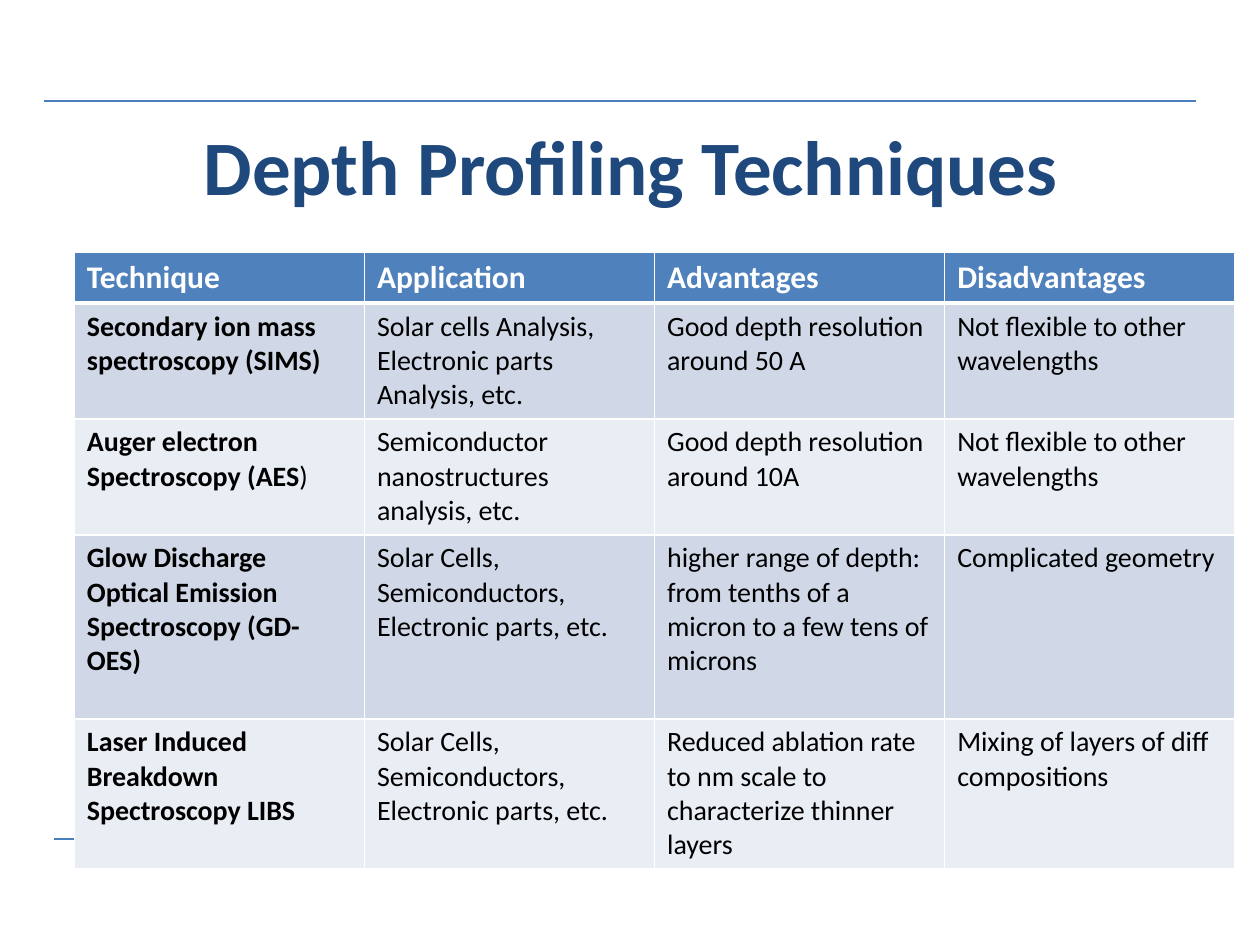
from dataclasses import dataclass

from lxml import etree
from pptx import Presentation
from pptx.dml.color import RGBColor
from pptx.enum.shapes import MSO_CONNECTOR
from pptx.enum.text import MSO_ANCHOR, PP_ALIGN
from pptx.oxml.ns import qn
from pptx.util import Inches, Pt

STRAIGHT = MSO_CONNECTOR.STRAIGHT
MIDDLE = MSO_ANCHOR.MIDDLE
CENTER = PP_ALIGN.CENTER
TITLE_ONLY = 5


@dataclass(frozen=True)
class Theme:
    font: str = "Calibri"
    title: str = "1F497D"
    rule: str = "4B7EBC"
    header: str = "4F81BD"
    bands: tuple = ("D0D8E8", "E9EDF4")
    white: str = "FFFFFF"
    text: str = "000000"
    title_size: int = 44
    header_size: int = 18
    body_size: int = 16


theme = Theme()


def add_text(paragraph, text, size=theme.body_size, color=theme.text, bold=False):
    run = paragraph.add_run()
    run.text = text
    run.font.name = theme.font
    run.font.size = Pt(size)
    run.font.bold = bold
    run.font.color.rgb = RGBColor.from_string(color)


def set_borders(cell, bottom_width):
    properties = cell._tc.get_or_add_tcPr()
    for tag, width in (("a:lnL", 1), ("a:lnR", 1), ("a:lnT", 1), ("a:lnB", bottom_width)):
        line = etree.SubElement(properties, qn(tag), w=str(Pt(width)))
        fill = etree.SubElement(line, qn("a:solidFill"))
        etree.SubElement(fill, qn("a:srgbClr"), val=theme.white)


presentation = Presentation()
presentation.slide_width = Inches(10)
presentation.slide_height = Inches(7.5)
slide = presentation.slides.add_slide(presentation.slide_layouts[TITLE_ONLY])

# Rules above the title and at the foot
for left, right, y in ((0.35, 9.49, 0.8), (0.43, 9.57, 6.66)):
    rule = slide.shapes.add_connector(
        STRAIGHT, Inches(left), Inches(y), Inches(right), Inches(y)
    )
    rule.line.color.rgb = RGBColor.from_string(theme.rule)
    rule.line.width = Pt(1)
    etree.SubElement(rule._element.spPr, qn("a:effectLst"))

# Title
title = slide.shapes.title
title.left, title.top = Inches(0.51), Inches(0.68)
title.width, title.height = Inches(9), Inches(1.25)
title.text_frame.vertical_anchor = MIDDLE
title_paragraph = title.text_frame.paragraphs[0]
title_paragraph.alignment = CENTER
add_text(title_paragraph, "Depth Profiling Techniques",
         size=theme.title_size, color=theme.title, bold=True)

# Comparison table
rows = [
    ("Technique", "Application", "Advantages", "Disadvantages"),
    ("Secondary ion mass spectroscopy (SIMS)",
     "Solar cells Analysis, Electronic parts Analysis, etc.",
     "Good depth resolution around 50 A",
     "Not flexible to other wavelengths"),
    ("Auger electron Spectroscopy (AES",
     "Semiconductor nanostructures analysis, etc.",
     "Good depth resolution around 10A",
     "Not flexible to other wavelengths"),
    ("Glow Discharge Optical Emission Spectroscopy (GD-OES)",
     "Solar Cells, Semiconductors, Electronic parts, etc.",
     "higher range of depth: from tenths of a micron to a few tens of microns",
     "Complicated geometry"),
    ("Laser Induced Breakdown Spectroscopy LIBS",
     "Solar Cells, Semiconductors, Electronic parts, etc.",
     "Reduced ablation rate to nm scale to characterize thinner layers",
     "Mixing of layers of diff compositions"),
]
row_heights = (0.4, 0.92, 0.92, 1.46, 1.18)
table = slide.shapes.add_table(
    len(rows), len(rows[0]), Inches(0.59), Inches(2),
    Inches(9.21), Inches(sum(row_heights))
).table
for row, height in zip(table.rows, row_heights):
    row.height = Inches(height)

for row_index, texts in enumerate(rows):
    is_header = row_index == 0
    fill_color = theme.header if is_header else theme.bands[(row_index - 1) % 2]
    for column_index, text in enumerate(texts):
        cell = table.cell(row_index, column_index)
        set_borders(cell, bottom_width=3 if is_header else 1)
        cell.fill.solid()
        cell.fill.fore_color.rgb = RGBColor.from_string(fill_color)
        add_text(
            cell.text_frame.paragraphs[0], text,
            size=theme.header_size if is_header else theme.body_size,
            color=theme.white if is_header else theme.text,
            bold=is_header or column_index == 0,
        )

# The closing bracket after AES is not bold
add_text(table.cell(2, 0).text_frame.paragraphs[0], ")")

presentation.save("out.pptx")
